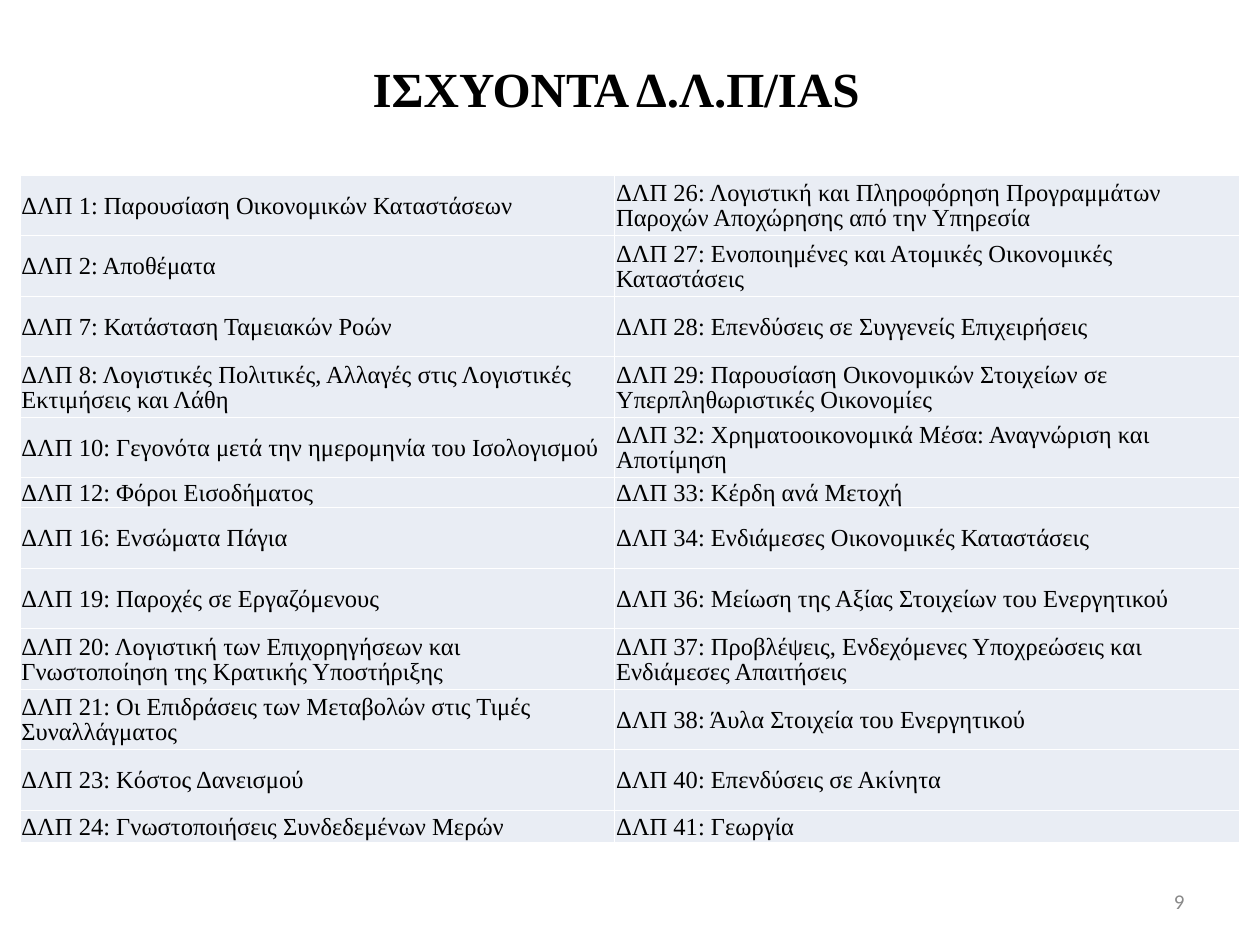
from lxml.etree import SubElement
from pptx import Presentation
from pptx.dml.color import RGBColor
from pptx.enum.text import MSO_ANCHOR as Anchor, PP_ALIGN as Align
from pptx.oxml.ns import qn
from pptx.util import Inches, Pt

SERIF = "Times New Roman"
BLACK, GREY, WHITE, PALE_BLUE = "000000", "898989", "FFFFFF", "E9EDF4"
TALL_ROW = 0.48
ROW_HEIGHTS = [TALL_ROW] * 5 + [0.24] + [TALL_ROW] * 5 + [0.26]
COLUMN_WIDTHS = [4.72, 4.96]
CELL_FORMAT = {
    "margin_left": Inches(0.01),
    "margin_right": Inches(0.01),
    "margin_top": Inches(0.02),
    "margin_bottom": 0,
    "vertical_anchor": Anchor.MIDDLE,
}
STANDARDS = [
    ("ΔΛΠ 1: Παρουσίαση Οικονομικών Καταστάσεων",
     "ΔΛΠ 26: Λογιστική και Πληροφόρηση Προγραμμάτων Παροχών Αποχώρησης από την Υπηρεσία"),
    ("ΔΛΠ 2: Αποθέματα",
     "ΔΛΠ 27: Ενοποιημένες και Ατομικές Οικονομικές Καταστάσεις"),
    ("ΔΛΠ 7: Κατάσταση Ταμειακών Ροών",
     "ΔΛΠ 28: Επενδύσεις σε Συγγενείς Επιχειρήσεις"),
    ("ΔΛΠ 8: Λογιστικές Πολιτικές, Αλλαγές στις Λογιστικές Εκτιμήσεις και Λάθη",
     "ΔΛΠ 29: Παρουσίαση Οικονομικών Στοιχείων σε Υπερπληθωριστικές Οικονομίες"),
    ("ΔΛΠ 10: Γεγονότα μετά την ημερομηνία του Ισολογισμού",
     "ΔΛΠ 32: Χρηματοοικονομικά Μέσα: Αναγνώριση και Αποτίμηση"),
    ("ΔΛΠ 12: Φόροι Εισοδήματος",
     "ΔΛΠ 33: Κέρδη ανά Μετοχή"),
    ("ΔΛΠ 16: Ενσώματα Πάγια",
     "ΔΛΠ 34: Ενδιάμεσες Οικονομικές Καταστάσεις"),
    ("ΔΛΠ 19: Παροχές σε Εργαζόμενους",
     "ΔΛΠ 36: Μείωση της Αξίας Στοιχείων του Ενεργητικού"),
    ("ΔΛΠ 20: Λογιστική των Επιχορηγήσεων και Γνωστοποίηση της Κρατικής Υποστήριξης",
     "ΔΛΠ 37: Προβλέψεις, Ενδεχόμενες Υποχρεώσεις και Ενδιάμεσες Απαιτήσεις"),
    ("ΔΛΠ 21: Οι Επιδράσεις των Μεταβολών στις Τιμές Συναλλάγματος",
     "ΔΛΠ 38: Άυλα Στοιχεία του Ενεργητικού"),
    ("ΔΛΠ 23: Κόστος Δανεισμού",
     "ΔΛΠ 40: Επενδύσεις σε Ακίνητα"),
    ("ΔΛΠ 24: Γνωστοποιήσεις Συνδεδεμένων Μερών",
     "ΔΛΠ 41: Γεωργία"),
]


def set_color(color_format, color):
    color_format.rgb = RGBColor.from_string(color)


def write_text(frame, text, align, color, **font_format):
    paragraph = frame.paragraphs[0]
    paragraph.alignment = align
    run = paragraph.add_run()
    run.text = text
    for name, value in font_format.items():
        setattr(run.font, name, value)
    set_color(run.font.color, color)
    return paragraph


def add_text(slide, box, text, align, color, **font_format):
    frame = slide.shapes.add_textbox(*map(Inches, box)).text_frame
    frame.word_wrap = True
    frame.vertical_anchor = Anchor.MIDDLE
    write_text(frame, text, align, color, **font_format)


def set_borders(cell, color, width):
    """Draw all four cell edges; they must precede the fill in the XML."""
    properties = cell._tc.get_or_add_tcPr()
    for edge in ("a:lnL", "a:lnR", "a:lnT", "a:lnB"):
        line = SubElement(properties, qn(edge), w=str(Pt(width)))
        fill = SubElement(line, qn("a:solidFill"))
        SubElement(fill, qn("a:srgbClr"), val=color)


def format_cell(cell, text):
    for name, value in CELL_FORMAT.items():
        setattr(cell, name, value)
    set_borders(cell, WHITE, 0.45)
    cell.fill.solid()
    set_color(cell.fill.fore_color, PALE_BLUE)
    paragraph = write_text(cell.text_frame, text, Align.LEFT, BLACK,
                           name=SERIF, size=Pt(14))
    paragraph.line_spacing = 0.93


def add_standards_table(slide, left, top):
    table = slide.shapes.add_table(
        len(ROW_HEIGHTS), len(COLUMN_WIDTHS), Inches(left), Inches(top),
        Inches(sum(COLUMN_WIDTHS)), Inches(sum(ROW_HEIGHTS))).table
    table.first_row = table.horz_banding = False
    for column, width in zip(table.columns, COLUMN_WIDTHS):
        column.width = Inches(width)
    for row, height, texts in zip(table.rows, ROW_HEIGHTS, STANDARDS):
        row.height = Inches(height)
        for cell, text in zip(row.cells, texts):
            format_cell(cell, text)


def main():
    presentation = Presentation()
    presentation.slide_width, presentation.slide_height = Inches(10), Inches(7.5)
    slide = presentation.slides.add_slide(presentation.slide_layouts[6])
    add_text(slide, (0.39, 0.36, 9, 0.67), "ΙΣΧΥΟΝΤΑ Δ.Λ.Π/IAS", Align.CENTER,
             BLACK, name=SERIF, size=Pt(28), bold=True)
    add_standards_table(slide, 0.16, 1.39)
    add_text(slide, (7.17, 6.95, 2.33, 0.4), "9", Align.RIGHT,
             GREY, name="Calibri", size=Pt(12))
    presentation.save("out.pptx")


if __name__ == "__main__":
    main()
